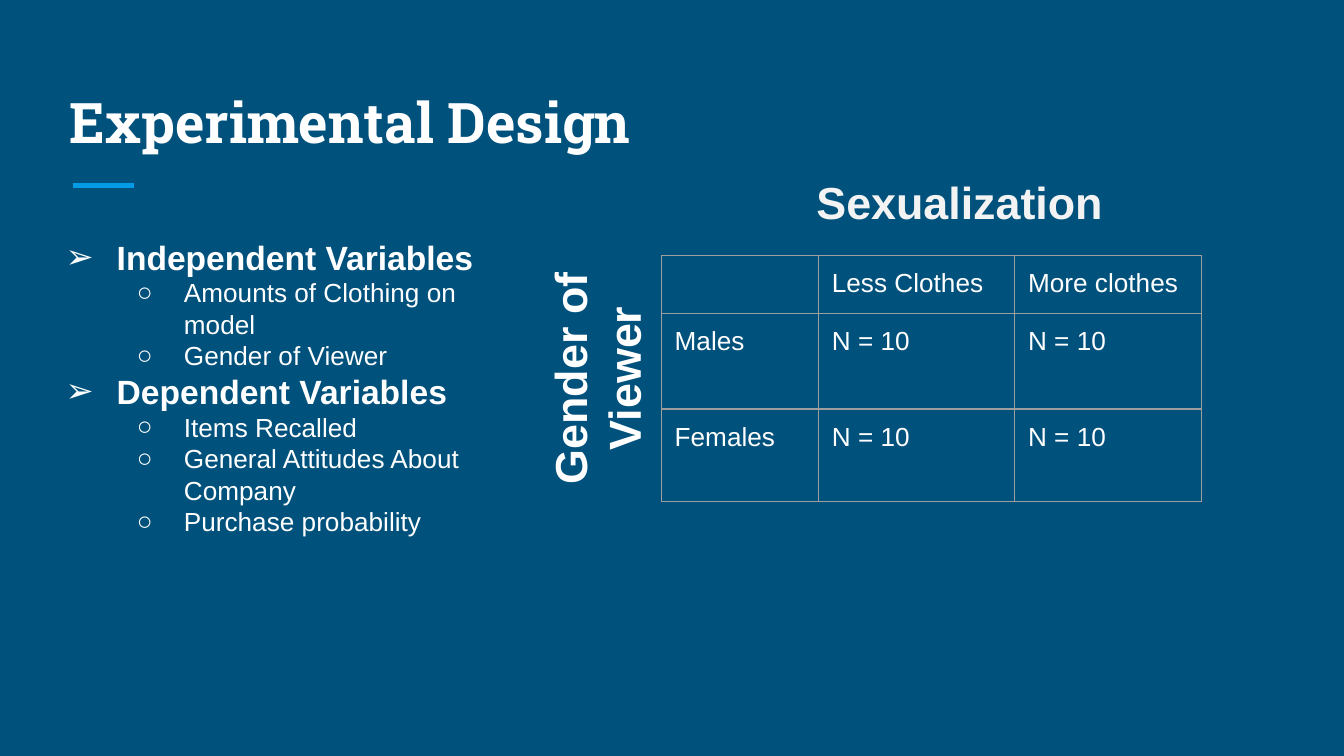
import dataclasses

import lxml.etree
import pptx
import pptx.dml.color
import pptx.enum.shapes
import pptx.enum.text
import pptx.oxml.ns
import pptx.util

Inches = pptx.util.Inches
Pt = pptx.util.Pt
qn = pptx.oxml.ns.qn
Align = pptx.enum.text.PP_ALIGN
Anchor = pptx.enum.text.MSO_ANCHOR


@dataclasses.dataclass(frozen=True)
class Theme:
    back: str = "00517C"
    bar: str = "039BE5"
    text: str = "FFFFFF"
    pale: str = "F3F3F3"
    grid: str = "9E9E9E"
    serif: str = "Roboto Slab"
    sans: str = "Arial"
    title: int = 30
    label: int = 24
    head: int = 18
    body: int = 14
    inset: float = 0.1


THEME = Theme()

TOPICS = {
    "Independent Variables": [
        "Amounts of Clothing on model",
        "Gender of Viewer",
    ],
    "Dependent Variables": [
        "Items Recalled",
        "General Attitudes About Company",
        "Purchase probability",
    ],
}

GROUPS = [
    ["", "Less Clothes", "More clothes"],
    ["Males", "N = 10", "N = 10"],
    ["Females", "N = 10", "N = 10"],
]
WIDTHS = [1.17, 1.46, 1.39]
HEIGHTS = [0.42, 0.71, 0.69]


def rgb(code):
    return pptx.dml.color.RGBColor.from_string(code)


def style(para, size, bold=False, color=THEME.text, face=THEME.sans):
    for run in para.runs:
        run.font.size = Pt(size)
        run.font.bold = bold
        run.font.name = face
        run.font.color.rgb = rgb(color)


def add_box(slide, left, top, width, height):
    box = slide.shapes.add_textbox(
        Inches(left), Inches(top), Inches(width), Inches(height))
    frame = box.text_frame
    frame.word_wrap = True
    frame.margin_left = frame.margin_right = Inches(THEME.inset)
    frame.margin_top = frame.margin_bottom = Inches(THEME.inset)
    return box


def add_title(slide, text):
    frame = add_box(slide, 0.42, 0.5, 9.15, 0.75).text_frame
    frame.vertical_anchor = Anchor.BOTTOM
    frame.text = text
    style(frame.paragraphs[0], THEME.title, True, face=THEME.serif)


def add_bar(slide):
    bar = slide.shapes.add_connector(
        pptx.enum.shapes.MSO_CONNECTOR.STRAIGHT,
        Inches(0.54), Inches(1.38), Inches(1), Inches(1.38))
    bar.line.color.rgb = rgb(THEME.bar)
    bar.line.width = Pt(3)
    lxml.etree.SubElement(bar._element.spPr, qn("a:effectLst"))


def add_label(slide, text, area, color=THEME.text, turn=0):
    box = add_box(slide, *area)
    box.rotation = turn
    box.text_frame.text = text
    para = box.text_frame.paragraphs[0]
    para.alignment = Align.CENTER
    style(para, THEME.label, True, color)


def add_bullet(para, mark, left, hang):
    props = para._p.get_or_add_pPr()
    props.set("marL", str(Inches(left)))
    props.set("indent", str(-Inches(hang)))
    color = lxml.etree.SubElement(props, qn("a:buClr"))
    lxml.etree.SubElement(color, qn("a:srgbClr"), val=THEME.text)
    lxml.etree.SubElement(props, qn("a:buFont"), typeface=THEME.sans)
    lxml.etree.SubElement(props, qn("a:buChar"), char=mark)


def add_list(slide, topics):
    frame = add_box(slide, 0.27, 1.66, 3.52, 3.13).text_frame
    lines = []
    for head, items in topics.items():
        lines.append((head, 0))
        lines += [(item, 1) for item in items]
    frame.text = "\n".join(text for text, level in lines)
    for para, (text, level) in zip(frame.paragraphs, lines):
        para.level = level
        if level:
            add_bullet(para, "○", 1, 0.35)
            style(para, THEME.body)
        else:
            add_bullet(para, "➢", 0.5, 0.38)
            style(para, THEME.head, True)


def add_edges(cell):
    props = cell._tc.get_or_add_tcPr()
    for side in ("L", "R", "T", "B"):
        edge = lxml.etree.SubElement(
            props, qn("a:ln" + side), w=str(Pt(0.75)))
        fill = lxml.etree.SubElement(edge, qn("a:solidFill"))
        lxml.etree.SubElement(fill, qn("a:srgbClr"), val=THEME.grid)


def fill_cell(cell, text):
    cell.margin_left = cell.margin_right = Inches(THEME.inset)
    cell.margin_top = cell.margin_bottom = Inches(THEME.inset)
    add_edges(cell)
    cell.fill.background()
    para = cell.text_frame.paragraphs[0]
    if text:
        para.text = text
        style(para, THEME.body)
    else:
        lxml.etree.SubElement(
            para._p, qn("a:endParaRPr"), sz=str(THEME.body * 100))


def add_grid(slide, data):
    shape = slide.shapes.add_table(
        len(HEIGHTS), len(WIDTHS), Inches(4.92), Inches(1.9),
        Inches(sum(WIDTHS)), Inches(sum(HEIGHTS)))
    table = shape.table
    table.first_row = False
    table.horz_banding = False
    for col, width in zip(table.columns, WIDTHS):
        col.width = Inches(width)
    for row, height, texts in zip(table.rows, HEIGHTS, data):
        row.height = Inches(height)
        for cell, text in zip(row.cells, texts):
            fill_cell(cell, text)
    shape.width = shape.height = Inches(3.28)


def main():
    deck = pptx.Presentation()
    deck.slide_width = Inches(10)
    deck.slide_height = deck.slide_width * 9 // 16
    slide = deck.slides.add_slide(deck.slide_layouts[6])
    slide.background.fill.solid()
    slide.background.fill.fore_color.rgb = rgb(THEME.back)
    add_bar(slide)
    add_title(slide, "Experimental Design")
    add_grid(slide, GROUPS)
    add_label(slide, "Sexualization", (5.34, 1.2, 3.6, 0.33), THEME.pale)
    add_label(slide, "Gender of Viewer", (3.39, 2.4, 1.92, 0.83), turn=270)
    add_list(slide, TOPICS)
    deck.save("out.pptx")


if __name__ == "__main__":
    main()
